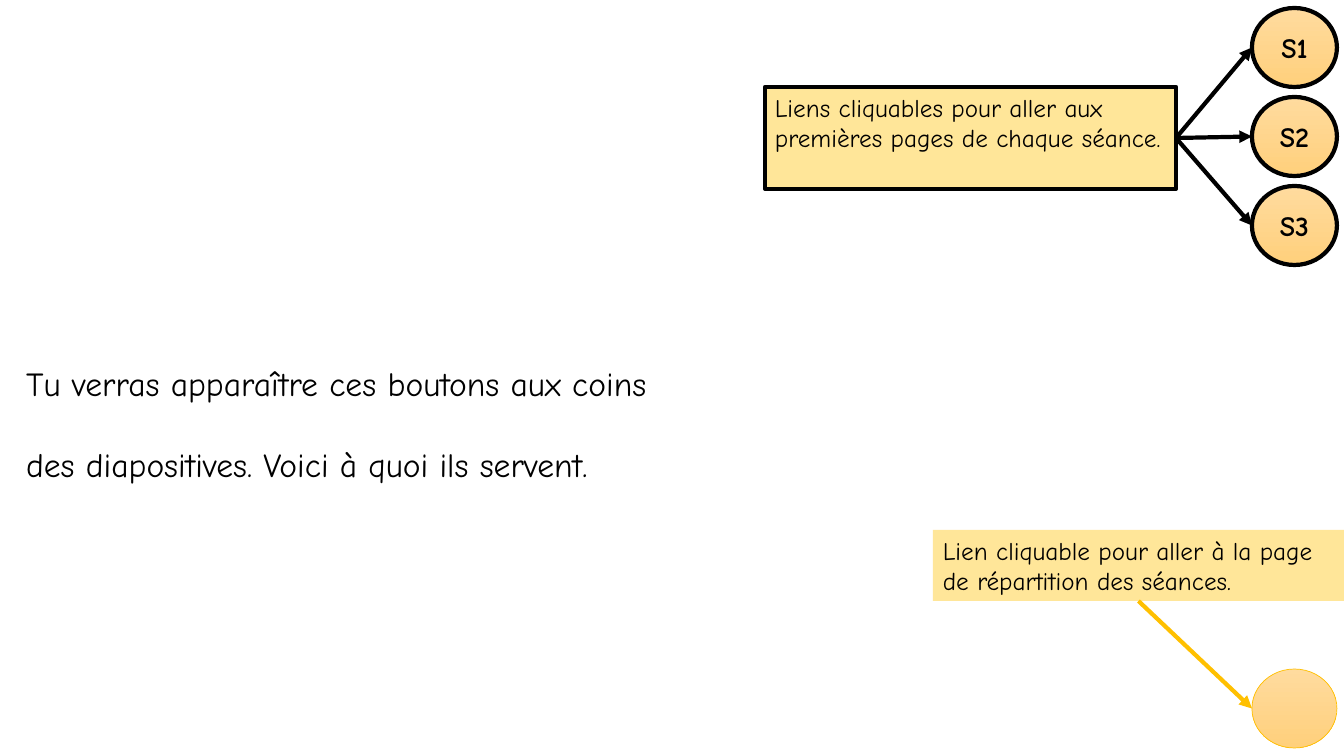
import pptx
import pptx.util
import pptx.dml.color
import pptx.enum.shapes
import pptx.enum.text
import pptx.oxml

RGB = pptx.dml.color.RGBColor
BLACK = RGB(0x00, 0x00, 0x00)
GOLD = RGB(0xFF, 0xC0, 0x00)
SAND = RGB(0xFF, 0xE6, 0x99)
PEACH_TOP = RGB(0xFF, 0xDB, 0x9E)
PEACH_BOTTOM = RGB(0xFF, 0xD0, 0x7C)

FONT = "Comic Neue"
SLIDE_W, SLIDE_H = 1344, 756
SCALE = 12192000 / SLIDE_W
BUTTON_W, BUTTON_H, BUTTON_STEP = 85, 79, 89
SHAPE = pptx.enum.shapes.MSO_SHAPE
ALIGN = pptx.enum.text.PP_ALIGN
ANCHOR = pptx.enum.text.MSO_ANCHOR


def px(n):
    return pptx.util.Emu(round(n * SCALE))


def write(tf, text, size, bold=False, align=ALIGN.LEFT, anchor=ANCHOR.TOP, spacing=None):
    """Put one formatted paragraph into a text frame."""
    for name, value in {"word_wrap": True, "vertical_anchor": anchor,
                        "auto_size": pptx.enum.text.MSO_AUTO_SIZE.NONE}.items():
        setattr(tf, name, value)
    p = tf.paragraphs[0]
    p.alignment, p.line_spacing = align, spacing
    r = p.add_run()
    r.text = text
    for name, value in {"name": FONT, "size": pptx.util.Pt(size), "bold": bold}.items():
        setattr(r.font, name, value)
    r.font.color.rgb = BLACK


def set_line(line, color, width):
    line.color.rgb = color
    line.width = pptx.util.Pt(width)


def add_title(s, box, text):
    sp = s.shapes.title
    for name, value in zip(("left", "top", "width", "height"), box):
        setattr(sp, name, px(value))
    write(sp.text_frame, text, 24, anchor=ANCHOR.BOTTOM, spacing=2.0)


def add_button(s, x, y, color, width, label=None):
    sp = s.shapes.add_shape(SHAPE.OVAL, px(x), px(y), px(BUTTON_W), px(BUTTON_H))
    sp.shadow.inherit = False
    sp.fill.gradient()
    sp.fill.gradient_angle = 270
    for stop, shade in zip(sp.fill.gradient_stops, (PEACH_TOP, PEACH_BOTTOM)):
        stop.color.rgb = shade
    set_line(sp.line, color, width)
    if label:
        write(sp.text_frame, label, 20, True, ALIGN.CENTER, ANCHOR.MIDDLE)
    return sp


def add_note(s, box, text, outlined):
    sp = s.shapes.add_shape(SHAPE.RECTANGLE, *map(px, box))
    sp.shadow.inherit = False
    sp.fill.solid()
    sp.fill.fore_color.rgb = SAND
    if outlined:
        set_line(sp.line, BLACK, 3)
    else:
        sp.line.fill.background()
    write(sp.text_frame, text, 18)
    return sp


def add_arrow(s, note, side, button, color):
    """Run an arrow from a side of the note to the button's left edge."""
    c = s.shapes.add_connector(pptx.enum.shapes.MSO_CONNECTOR.STRAIGHT, 0, 0,
                               button.left, button.top + button.height // 2)
    c.begin_connect(note, side)
    set_line(c.line, color, 3)
    c.line._get_or_add_ln().append(pptx.oxml.parse_xml(
        '<a:tailEnd xmlns:a="http://schemas.openxmlformats.org/drawingml/2006/main" type="triangle"/>'))
    c._element.spPr.append(pptx.oxml.parse_xml(
        '<a:effectLst xmlns:a="http://schemas.openxmlformats.org/drawingml/2006/main"/>'))


def add_session_links(s, x, y):
    """Numbered session buttons with their explanation on the left."""
    buttons = [add_button(s, x, y + i * BUTTON_STEP, BLACK, 3, f"S{i + 1}") for i in range(3)]
    note = add_note(s, (x - 487, y + 79, 411, 102),
                    "Liens cliquables pour aller aux premières pages de chaque séance.", True)
    for button in buttons:
        add_arrow(s, note, 3, button, BLACK)


def add_overview_link(s, x, y):
    """Single button with its explanation above."""
    button = add_button(s, x, y, GOLD, 0.5)
    note = add_note(s, (x - 319, y - 139, 411, 71),
                    "Lien cliquable pour aller à la page de répartition des séances.", False)
    add_arrow(s, note, 2, button, GOLD)


def main():
    prs = pptx.Presentation()
    prs.slide_width, prs.slide_height = px(SLIDE_W), px(SLIDE_H)
    s = prs.slides.add_slide(prs.slide_layouts[0])
    subtitle = s.placeholders[1]._element
    subtitle.getparent().remove(subtitle)

    # Introduction
    add_title(s, (16, 267, 656, 222),
              "Tu verras apparaître ces boutons aux coins des diapositives. Voici à quoi ils servent.")
    # Corner buttons
    add_overview_link(s, 1252, 669)
    add_session_links(s, 1252, 8)

    prs.save("out.pptx")


if __name__ == "__main__":
    main()
